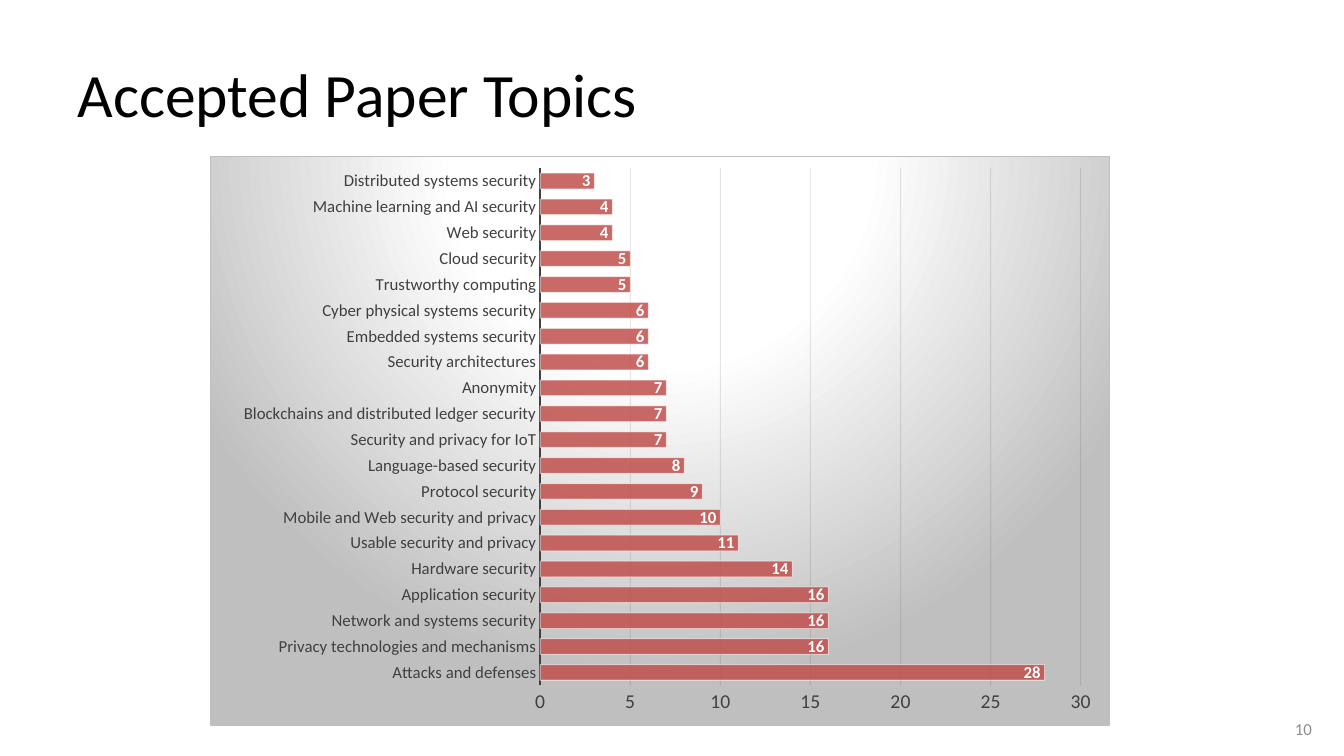
from lxml import etree
from pptx import Presentation
from pptx.chart.data import CategoryChartData
from pptx.dml.color import RGBColor
from pptx.enum import chart as ch, text as tx
from pptx.oxml import parse_xml
from pptx.oxml.ns import nsdecls, qn
from pptx.util import Inches, Pt

# Content, from the top bar down
TITLE = "Accepted Paper Topics"
NUMBER = "10"
TOPICS = [
    ("Distributed systems security", 3),
    ("Machine learning and AI security", 4),
    ("Web security", 4),
    ("Cloud security", 5),
    ("Trustworthy computing", 5),
    ("Cyber physical systems security", 6),
    ("Embedded systems security", 6),
    ("Security architectures", 6),
    ("Anonymity", 7),
    ("Blockchains and distributed ledger security", 7),
    ("Security and privacy for IoT", 7),
    ("Language-based security", 8),
    ("Protocol security", 9),
    ("Mobile and Web security and privacy", 10),
    ("Usable security and privacy", 11),
    ("Hardware security", 14),
    ("Application security", 16),
    ("Network and systems security", 16),
    ("Privacy technologies and mechanisms", 16),
    ("Attacks and defenses", 28),
]
FONT = "Calibri"
DARK = "404040"
STOPS = [(0, "FFFFFF"), (39, "FFFFFF"), (100, "BFBFBF")]
PLOT = {"x": 0.367, "y": 0.02, "w": 0.601, "h": 0.91}


def paint(color, code):
    color.rgb = RGBColor.from_string(code)


def style(font, size, code, bold=False):
    font.name, font.size, font.bold = FONT, Pt(size), bold
    paint(font.color, code)


def stroke(line, code, width):
    line.fill.solid()
    paint(line.color, code)
    line.width = Pt(width)


def fade(props, share):
    """Set the opacity, in percent, of the only colour in props."""
    color = next(props.iter(qn("a:srgbClr")))
    etree.SubElement(color, qn("a:alpha")).set("val", str(share * 1000))


def write(slide, words, box, size, code, align=tx.PP_ALIGN.LEFT):
    frame = slide.shapes.add_textbox(*map(Inches, box)).text_frame
    frame.word_wrap = True
    frame.vertical_anchor = tx.MSO_ANCHOR.MIDDLE
    par = frame.paragraphs[0]
    par.text, par.alignment = words, align
    style(par.runs[0].font, size, code)


# Slide with title and number
deck = Presentation()
deck.slide_width, deck.slide_height = Inches(13.33), Inches(7.5)
slide = deck.slides.add_slide(deck.slide_layouts[6])
write(slide, TITLE, (0.67, 0.3, 12, 1.25), 44, "000000")
write(slide, NUMBER, (10, 7.03, 3.11, 0.4), 12, "8C8C8C", tx.PP_ALIGN.RIGHT)

# Bar chart: the first category sits at the bottom
names, counts = zip(*reversed(TOPICS))
data = CategoryChartData()
data.categories = names
data.add_series("Series 1", counts)
box = map(Inches, (2.08, 1.55, 8.93, 5.65))
chart = slide.shapes.add_chart(ch.XL_CHART_TYPE.BAR_CLUSTERED, *box, data).chart
chart.has_legend = chart.has_title = False
style(chart.font, 10, "000000")

# Axes
topic, count = chart.category_axis, chart.value_axis
for axis, size in ((topic, 12), (count, 14)):
    axis.major_tick_mark = axis.minor_tick_mark = ch.XL_TICK_MARK.NONE
    style(axis.tick_labels.font, size, DARK)
topic.has_major_gridlines = False
stroke(topic.format.line, DARK, 1.5)
count.minimum_scale, count.maximum_scale, count.major_unit = 0, 30, 5
count.format.line.fill.background()
grid = count.major_gridlines.format.line
stroke(grid, "0D0D0D", 0.75)
fade(count._element.find(qn("c:majorGridlines")), 10)

# Bars and their labels
plot = chart.plots[0]
plot.gap_width, plot.vary_by_categories = 65, False
bars = plot.series[0]
bars.format.fill.solid()
paint(bars.format.fill.fore_color, "C0504D")
stroke(bars.format.line, "FFFFFF", 0.75)
props = bars._element.find(qn("c:spPr"))
fade(props.find(qn("a:solidFill")), 85)
fade(props.find(qn("a:ln")), 50)
labels = bars.data_labels
labels.show_value = True
labels.position = ch.XL_LABEL_POSITION.INSIDE_END
style(labels.font, 12, "FFFFFF", bold=True)

# Chart background: radial gradient centred above the top edge
stops = "".join(f'<a:gs pos="{at * 1000}"><a:srgbClr val="{code}"/></a:gs>'
                for at, code in STOPS)
back = parse_xml(
    f'<c:spPr {nsdecls("c", "a")}><a:gradFill><a:gsLst>{stops}</a:gsLst>'
    '<a:path path="circle">'
    '<a:fillToRect l="50000" t="-80000" r="50000" b="180000"/></a:path>'
    '</a:gradFill><a:ln w="9525"><a:solidFill><a:srgbClr val="BFBFBF"/>'
    '</a:solidFill></a:ln></c:spPr>')
root = chart._chartSpace
root.find(qn("c:chart")).addnext(back)

# Fixed plot area
area = root.find(".//" + qn("c:plotArea"))
for old in area.findall(qn("c:layout")):
    area.remove(old)
sides = "".join(f'<c:{k} val="{v}"/>' for k, v in PLOT.items())
area.insert(0, parse_xml(
    f'<c:layout {nsdecls("c")}><c:manualLayout><c:layoutTarget val="inner"/>'
    f'<c:xMode val="edge"/><c:yMode val="edge"/>{sides}'
    '</c:manualLayout></c:layout>'))

deck.save("out.pptx")
